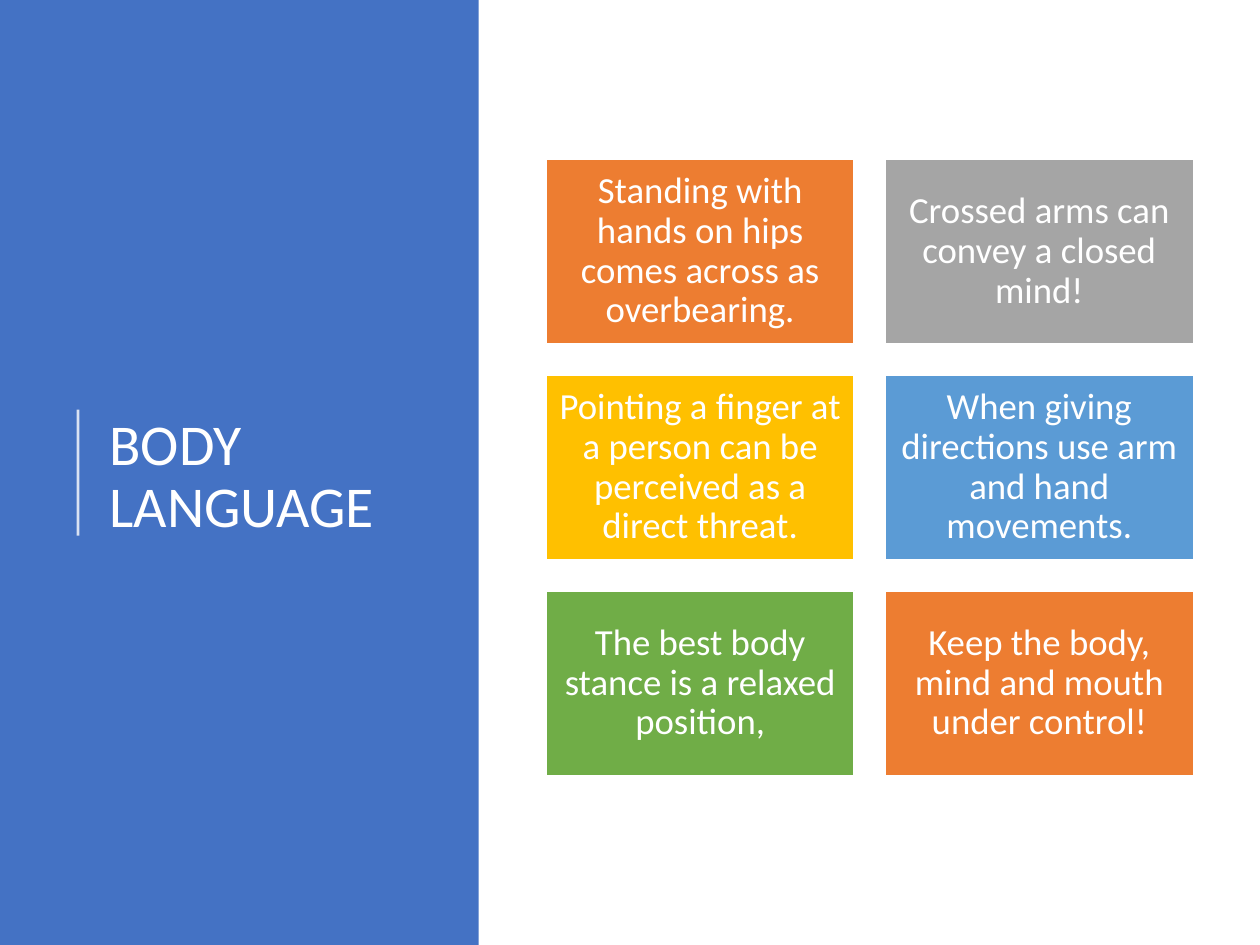
"""Build the body language slide: a title panel beside a grid of six advice cards."""
import lxml.etree
import pptx
import pptx.dml.color
import pptx.enum.shapes
import pptx.enum.text
import pptx.oxml.ns
import pptx.util

Pt = pptx.util.Pt
RGB = pptx.dml.color.RGBColor.from_string
qn = pptx.oxml.ns.qn

HEADING = "BODY LANGUAGE"
ADVICE = [
    ("Standing with hands on hips comes across as overbearing.", "orange"),
    ("Crossed arms can convey a closed mind!", "gray"),
    ("Pointing a finger at a person can be perceived as a direct threat.", "gold"),
    ("When giving directions use arm and hand movements.", "sky"),
    ("The best body stance is a relaxed position,", "green"),
    ("Keep the body, mind and mouth under control!", "orange"),
]

THEME = {
    "font": "Calibri", "heading_size": 33, "card_size": 21, "line_spacing": 0.9,
    "white": "FFFFFF", "blue": "4472C4", "orange": "ED7D31", "gray": "A5A5A5",
    "gold": "FFC000", "sky": "5B9BD5", "green": "70AD47",
}

SLIDE_WIDTH, SLIDE_HEIGHT = 720, 540
PANEL_WIDTH = 273.6
HEADING_BOX = (55.4, 56.2, 198.7, 433.4)
RULE_X, RULE_TOP, RULE_BOTTOM = 44.6, 234, 306
COLUMNS = 2
GRID_LEFT, GRID_TOP = 312, 90.9
CARD_WIDTH = 176.2
CARD_HEIGHT = CARD_WIDTH * 0.6
CARD_GAP = CARD_WIDTH * 0.1
CARD_INSET = 6.5


def write(frame, words, size, alignment):
    frame.text = words
    frame.word_wrap = True
    frame.auto_size = pptx.enum.text.MSO_AUTO_SIZE.NONE
    frame.vertical_anchor = pptx.enum.text.MSO_ANCHOR.MIDDLE
    paragraph = frame.paragraphs[0]
    paragraph.alignment = alignment
    paragraph.line_spacing = THEME["line_spacing"]
    paragraph.font.name = THEME["font"]
    paragraph.font.size = Pt(size)
    paragraph.font.color.rgb = RGB(THEME["white"])


def add_block(slide, left, top, width, height, color):
    block = slide.shapes.add_shape(
        pptx.enum.shapes.MSO_SHAPE.RECTANGLE, Pt(left), Pt(top), Pt(width), Pt(height))
    block.shadow.inherit = False
    block.fill.solid()
    block.fill.fore_color.rgb = RGB(THEME[color])
    block.line.fill.background()
    return block


def add_heading(slide):
    panel = add_block(slide, 0, 0, PANEL_WIDTH, SLIDE_HEIGHT, "blue")
    heading = slide.shapes.title
    heading._element.addprevious(panel._element)
    heading.left, heading.top, heading.width, heading.height = map(Pt, HEADING_BOX)
    write(heading.text_frame, HEADING, THEME["heading_size"], pptx.enum.text.PP_ALIGN.LEFT)


def add_rule(slide):
    rule = slide.shapes.add_connector(
        pptx.enum.shapes.MSO_CONNECTOR.STRAIGHT,
        Pt(RULE_X), Pt(RULE_BOTTOM), Pt(RULE_X), Pt(RULE_TOP))
    rule.line.width = Pt(1.5)
    rule.line.color.rgb = RGB(THEME["white"])
    properties = rule._element.spPr
    tint = properties.find(".//" + qn("a:srgbClr"))
    lxml.etree.SubElement(tint, qn("a:alpha"), val="80000")
    lxml.etree.SubElement(properties, qn("a:effectLst"))


def add_cards(slide):
    for index, (advice, color) in enumerate(ADVICE):
        row, column = divmod(index, COLUMNS)
        card = add_block(
            slide,
            GRID_LEFT + column * (CARD_WIDTH + CARD_GAP),
            GRID_TOP + row * (CARD_HEIGHT + CARD_GAP),
            CARD_WIDTH, CARD_HEIGHT, color)
        card.line.color.rgb = RGB(THEME["white"])
        card.line.width = Pt(1)
        frame = card.text_frame
        frame.margin_left = frame.margin_right = Pt(CARD_INSET)
        frame.margin_top = frame.margin_bottom = Pt(CARD_INSET)
        write(frame, advice, THEME["card_size"], pptx.enum.text.PP_ALIGN.CENTER)


def main():
    deck = pptx.Presentation()
    deck.slide_width, deck.slide_height = Pt(SLIDE_WIDTH), Pt(SLIDE_HEIGHT)
    slide = deck.slides.add_slide(deck.slide_layouts[5])
    add_heading(slide)
    add_rule(slide)
    add_cards(slide)
    deck.save("out.pptx")


if __name__ == "__main__":
    main()
